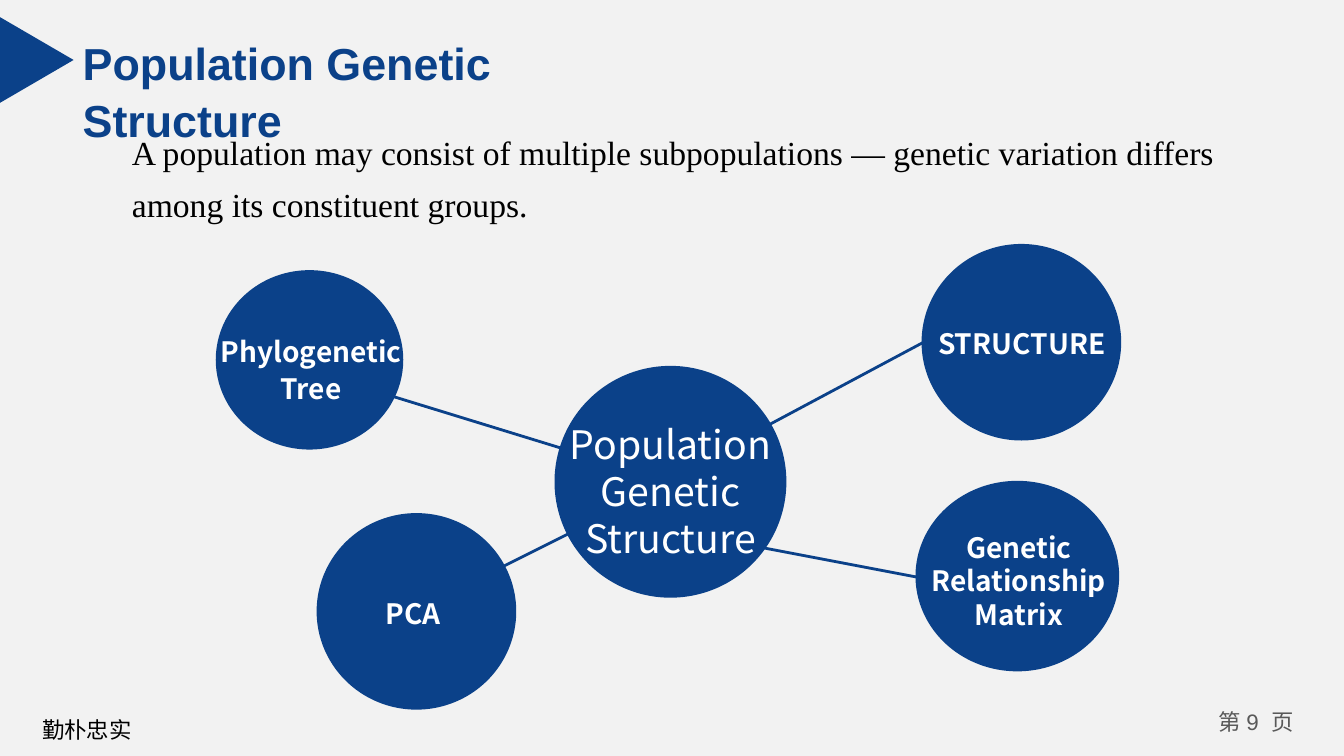
import pptx
import pptx.dml.color
import pptx.enum.shapes
import pptx.enum.text
import pptx.oxml
import pptx.oxml.ns
import pptx.util

Inches, Pt = pptx.util.Inches, pptx.util.Pt
RGBColor = pptx.dml.color.RGBColor
MSO_SHAPE = pptx.enum.shapes.MSO_SHAPE
PP_ALIGN = pptx.enum.text.PP_ALIGN

BLUE = RGBColor(0x0B, 0x41, 0x89)
WHITE = RGBColor(0xFF, 0xFF, 0xFF)
BLACK = RGBColor(0, 0, 0)
GRAY = RGBColor(0x59, 0x59, 0x59)
PALE = RGBColor(0xF2, 0xF2, 0xF2)
SANS = "Noto Sans CJK SC"


def add_text(shapes, box, runs, size, color, bold=False, align=PP_ALIGN.LEFT, spacing=None):
    """Add a one-paragraph text box; runs are (text, font name) pairs."""
    tb = shapes.add_textbox(*map(Inches, box))
    tf = tb.text_frame
    tf.word_wrap = True
    p = tf.paragraphs[0]
    p.alignment, p.line_spacing = align, spacing
    for text, font in runs:
        r = p.add_run()
        r.text = text
        r.font.size, r.font.bold, r.font.name = Pt(size), bold, font
        r.font.color.rgb = color
        ea = pptx.oxml.parse_xml(f'<a:ea {pptx.oxml.ns.nsdecls("a")} typeface="{font}"/>')
        r.font._element.find(pptx.oxml.ns.qn("a:latin")).addnext(ea)


def add_solid(shapes, kind, box):
    sp = shapes.add_shape(kind, *map(Inches, box))
    sp.shadow.inherit = False
    sp.fill.solid()
    sp.fill.fore_color.rgb = BLUE
    sp.line.fill.background()
    return sp


prs = pptx.Presentation()
prs.slide_width, prs.slide_height = Inches(13.33), Inches(7.5)
s = prs.slides.add_slide(prs.slide_layouts[5])
s.background.fill.solid()
s.background.fill.fore_color.rgb = PALE

# Page number and motto
add_text(s.shapes, (11.86, 6.98, 1.2, 0.4), [("第 ", SANS), ("9  ", "Arial"), ("页", SANS)],
         16, GRAY, align=PP_ALIGN.CENTER)
add_text(s.shapes, (0.32, 6.98, 3.13, 0.43), [("勤朴忠实", SANS)], 16, BLACK, spacing=1.3)

# Links between the hub and the methods
links = [
    (3.66, 3.86, 6.62, 4.77),
    (4.49, 5.87, 6.63, 4.8),
    (6.53, 4.8, 9.32, 3.31),
    (6.6, 5.25, 10.22, 5.94),
]
for ends in links:
    link = s.shapes.add_connector(pptx.enum.shapes.MSO_CONNECTOR.STRAIGHT, *map(Inches, ends))
    link.line.color.rgb = BLUE
    link.line.width = Pt(2)
    link._element.spPr.append(
        pptx.oxml.parse_xml(f'<a:effectLst {pptx.oxml.ns.nsdecls("a")}/>'))

# Circles: label, circle box, label box, size, bold, line pitch in points
circles = [
    ("Population Genetic Structure", (5.5, 3.63, 2.3, 2.3), (5.5, 4.12, 2.3, 1.51), 28, False, 33.6),
    ("STRUCTURE", (9.14, 2.42, 1.98, 1.95), (9.17, 3.19, 1.93, 0.44), 20, True, 24),
    ("Phylogenetic Tree", (2.14, 2.68, 1.86, 1.78), (1.88, 3.24, 2.41, 0.84), 20, True, 26.4),
    ("Genetic Relationship Matrix", (9.08, 4.77, 2.02, 1.89), (9.08, 5.21, 2.05, 1.04), 20, True, 24),
    ("PCA", (3.14, 5.09, 1.98, 1.95), (3.32, 5.87, 1.56, 0.44), 20, True, 24),
]
for label, circle_box, label_box, size, bold, pitch in circles:
    group = s.shapes.add_group_shape()
    add_solid(group.shapes, MSO_SHAPE.OVAL, circle_box)
    add_text(group.shapes, label_box, [(label, SANS)], size, WHITE, bold,
             PP_ALIGN.CENTER, Pt(pitch))

# Heading
marker = add_solid(s.shapes, MSO_SHAPE.ISOSCELES_TRIANGLE, (-0.06, 0.23, 0.85, 0.73))
marker.rotation = 90

title = s.shapes.title
title.left, title.top, title.width, title.height = map(Inches, (0.69, 0.26, 6.2, 0.67))
tf = title.text_frame
tf.text = "Population Genetic Structure"
tf.word_wrap = True
tf.auto_size = pptx.enum.text.MSO_AUTO_SIZE.NONE
tf.vertical_anchor = pptx.enum.text.MSO_ANCHOR.TOP
tf.margin_left = tf.margin_right = Inches(0.13)
tf.margin_top = tf.margin_bottom = Inches(0.07)
p = tf.paragraphs[0]
p.alignment, p.line_spacing = PP_ALIGN.LEFT, 1.05
p.font.name, p.font.size, p.font.bold = "Arial", Pt(32), True
p.font.color.rgb = BLUE

add_text(s.shapes, (1.21, 1.14, 11.08, 0.77),
         [("A population may consist of multiple subpopulations — genetic variation "
           "differs among its constituent groups.", "Times New Roman")],
         24, BLACK, spacing=1.3)

prs.save("out.pptx")
